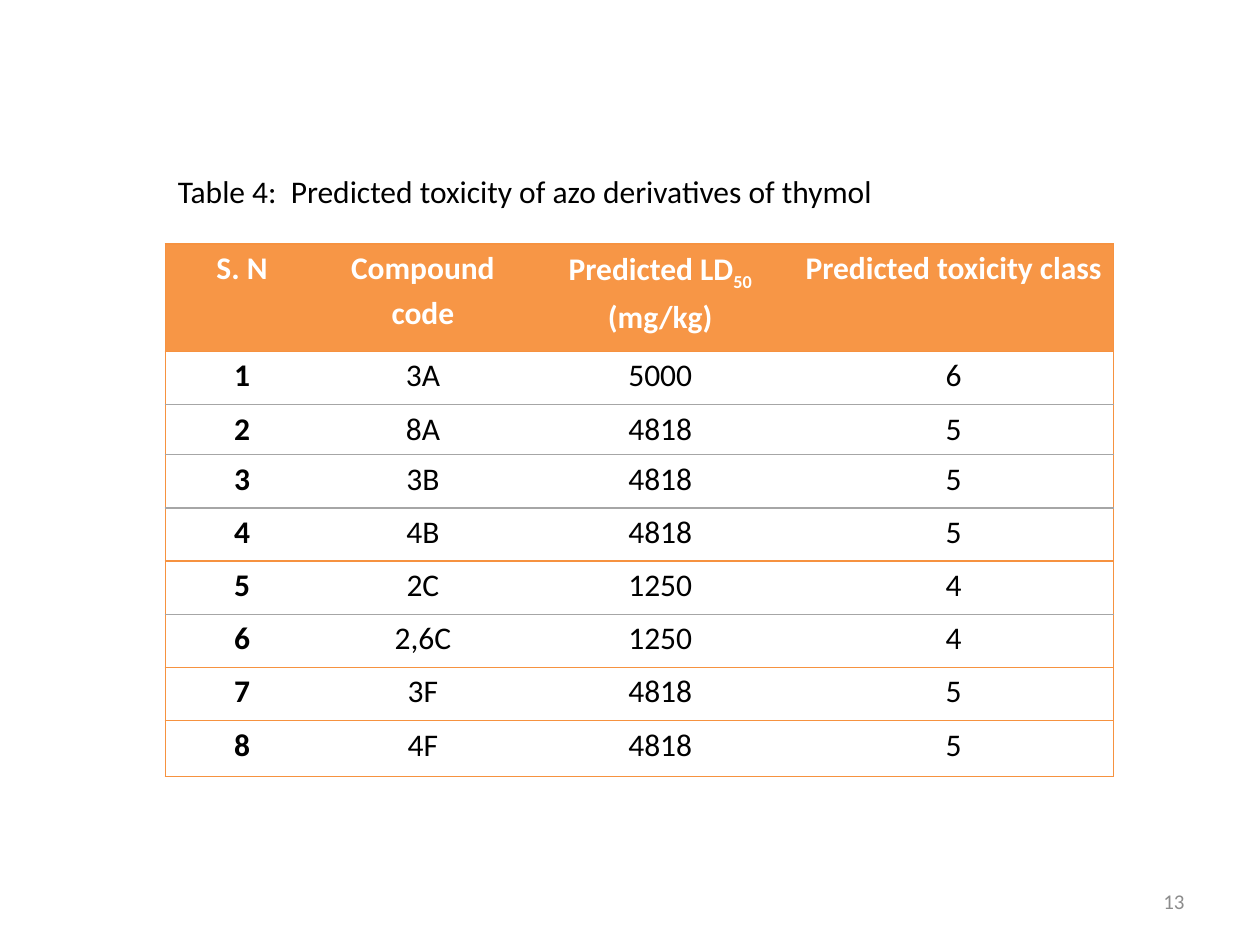
import pptx
import pptx.dml.color
import pptx.enum.text
import pptx.oxml
import pptx.oxml.ns
import pptx.util
from pptx.util import Cm

FONT = "Calibri"
COLORS = {
    "accent": "F79646",
    "border": "F69240",
    "rule": "A6A6A6",
    "text": "000000",
    "header": "FFFFFF",
    "number": "8C8C8C",
}
ALIGN = pptx.enum.text.PP_ALIGN
ANCHOR = pptx.enum.text.MSO_ANCHOR

HEADERS = ["S. N", "Compound code", "Predicted LD", "Predicted toxicity class"]
LD50_TAIL = ["50", " (mg/kg)"]
COMPOUNDS = [
    ("3A", "5000", "6"),
    ("8A", "4818", "5"),
    ("3B", "4818", "5"),
    ("4B", "4818", "5"),
    ("2C", "1250", "4"),
    ("2,6C", "1250", "4"),
    ("3F", "4818", "5"),
    ("4F", "4818", "5"),
]
COLUMN_WIDTHS = [3.1, 4.19, 5.38, 6.45]
ROW_HEIGHTS = [2.16, 1.07, 1.02, 1.07, 1.07, 1.07, 1.07, 1.07, 1.14]
GREY_RULES = {1, 2, 3, 5}  # rows with a grey line below


def rgb(name):
    return pptx.dml.color.RGBColor.from_string(COLORS[name])


def format_paragraph(paragraph, size, color, align, bold=False):
    paragraph.alignment = align
    for run in paragraph.runs:
        run.font.name = FONT
        run.font.size = pptx.util.Pt(size)
        run.font.bold = bold
        run.font.color.rgb = rgb(color)


def set_border(cell, side, color=None):
    if color:
        paint = f'<a:solidFill><a:srgbClr val="{COLORS[color]}"/></a:solidFill>'
    else:
        paint = "<a:noFill/>"
    line = pptx.oxml.parse_xml(
        f'<a:ln{side} {pptx.oxml.ns.nsdecls("a")} w="9525">{paint}</a:ln{side}>')
    cell._tc.get_or_add_tcPr().append(line)


def rule_below(row):
    return "rule" if row in GREY_RULES else "border"


def style_cell(cell, row, column):
    is_header = row == 0
    # Borders come before the fill in the cell properties
    set_border(cell, "L", "border" if column == 0 else None)
    set_border(cell, "R", "border" if column == len(HEADERS) - 1 else None)
    set_border(cell, "T", "border" if is_header else rule_below(row - 1))
    set_border(cell, "B", rule_below(row))
    if is_header:
        cell.fill.solid()
        cell.fill.fore_color.rgb = rgb("accent")
    else:
        cell.fill.background()

    cell.margin_left = cell.margin_right = Cm(0.18)
    cell.margin_top = cell.margin_bottom = 0
    cell.vertical_anchor = ANCHOR.TOP
    paragraph = cell.text_frame.paragraphs[0]
    paragraph.line_spacing = 1.15
    format_paragraph(paragraph, 18, "header" if is_header else "text",
                     ALIGN.CENTER, bold=is_header or column == 0)


def add_toxicity_table(slide):
    rows = [HEADERS] + [(str(number), *compound)
                        for number, compound in enumerate(COMPOUNDS, 1)]
    toxicity = slide.shapes.add_table(
        len(rows), len(HEADERS), Cm(3.33), Cm(4.92),
        Cm(sum(COLUMN_WIDTHS)), Cm(sum(ROW_HEIGHTS))).table
    toxicity.horz_banding = False
    for column, width in zip(toxicity.columns, COLUMN_WIDTHS):
        column.width = Cm(width)
    for row, height in zip(toxicity.rows, ROW_HEIGHTS):
        row.height = Cm(height)

    for r, values in enumerate(rows):
        for c, value in enumerate(values):
            cell = toxicity.cell(r, c)
            cell.text_frame.text = value
            if value == "Predicted LD":
                heading = cell.text_frame.paragraphs[0]
                for part in LD50_TAIL:
                    heading.add_run().text = part
                heading.runs[1].font._element.set("baseline", "-25000")
            style_cell(cell, r, c)


def add_caption(slide):
    caption = slide.shapes.title
    caption.left, caption.top = Cm(3.33), Cm(3.35)
    caption.width, caption.height = Cm(22.81), Cm(1.02)
    frame = caption.text_frame
    frame.text = "Table 4:  Predicted toxicity of azo derivatives of thymol"
    frame.auto_size = pptx.enum.text.MSO_AUTO_SIZE.NONE
    frame.vertical_anchor = ANCHOR.TOP
    format_paragraph(frame.paragraphs[0], 18, "text", ALIGN.LEFT)


def add_page_number(slide):
    page = slide.shapes.add_textbox(Cm(18.2), Cm(17.65), Cm(5.93), Cm(1.02))
    frame = page.text_frame
    frame.word_wrap = True
    frame.vertical_anchor = ANCHOR.MIDDLE
    frame.text = "13"
    format_paragraph(frame.paragraphs[0], 12, "number", ALIGN.RIGHT)


def main():
    deck = pptx.Presentation()
    deck.slide_width, deck.slide_height = Cm(25.4), Cm(19.05)
    slide = deck.slides.add_slide(deck.slide_layouts[5])  # Title Only
    add_page_number(slide)
    add_toxicity_table(slide)
    add_caption(slide)
    deck.save("out.pptx")


if __name__ == "__main__":
    main()
